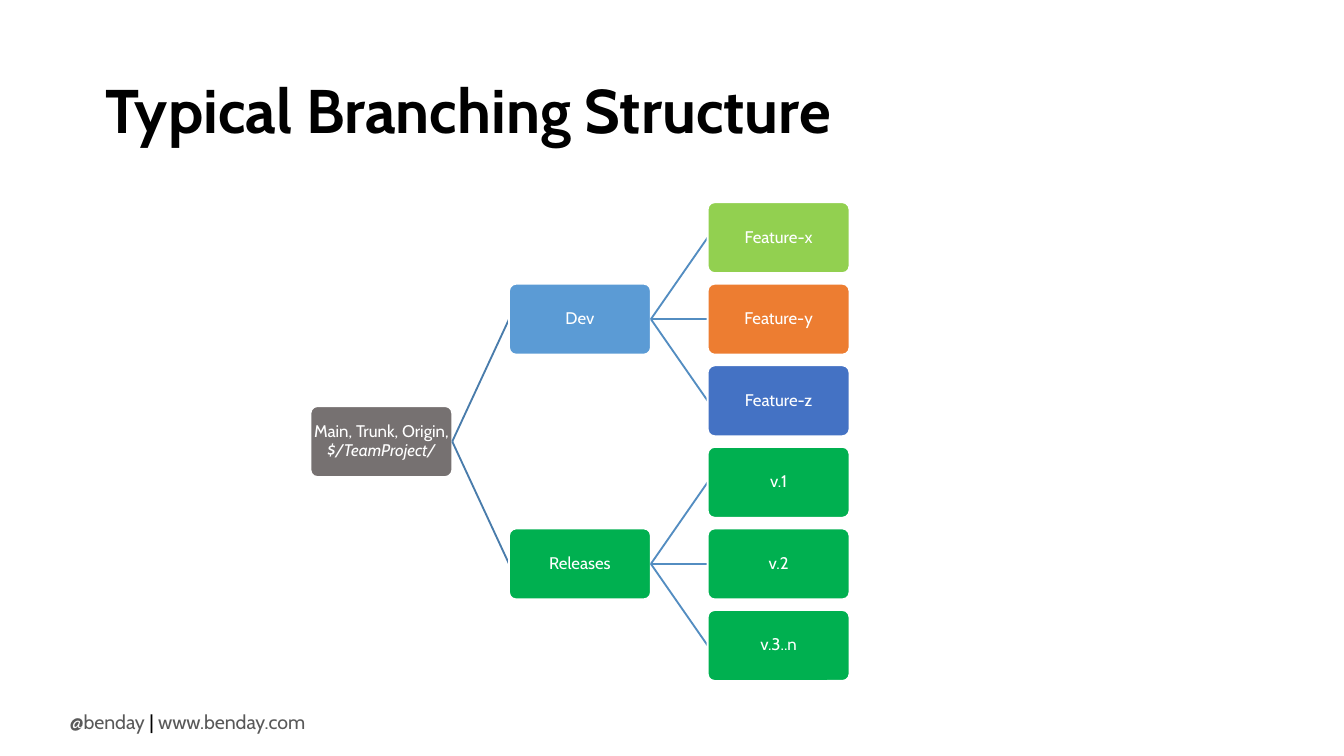
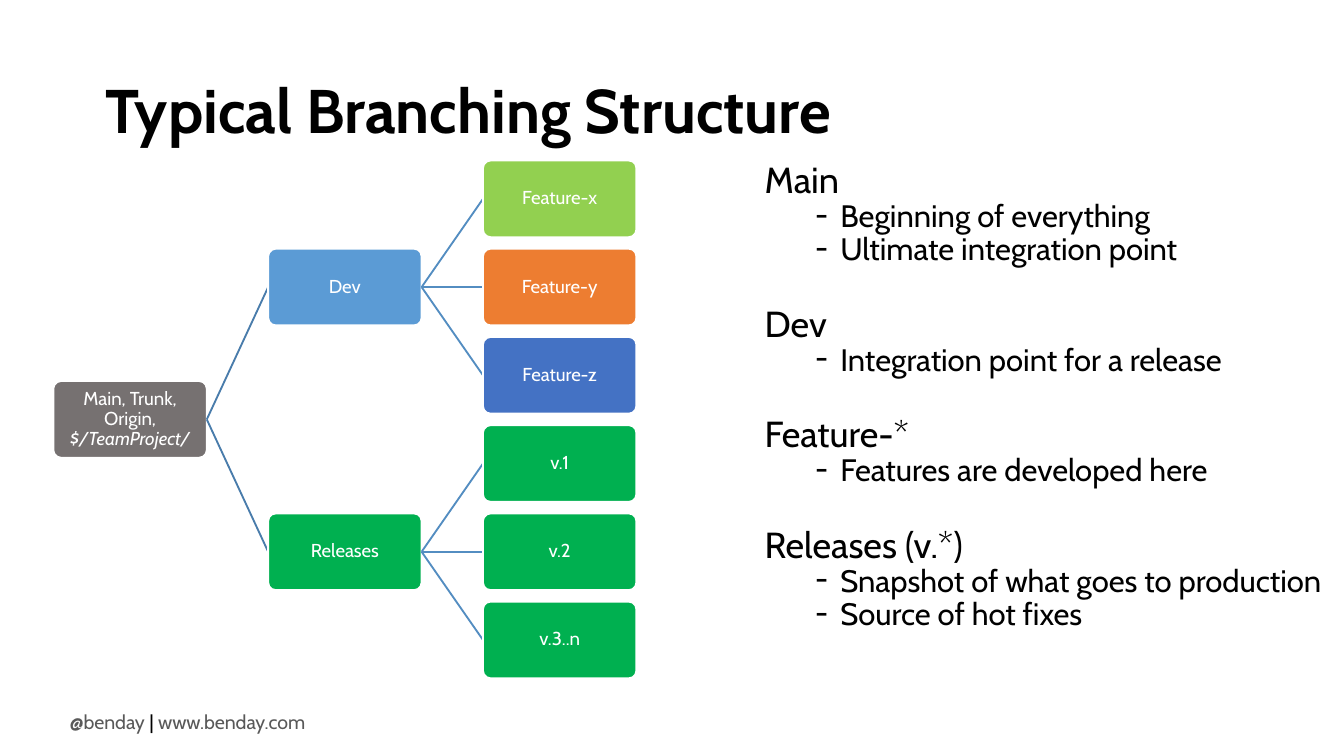
from dataclasses import dataclass

from lxml import etree
from pptx import Presentation
from pptx.dml.color import RGBColor as Rgb
from pptx.enum.shapes import MSO_CONNECTOR as Conn, MSO_SHAPE as Shape
from pptx.enum.text import MSO_ANCHOR as Anchor, MSO_AUTO_SIZE as Fit, PP_ALIGN as Align
from pptx.oxml.ns import qn
from pptx.util import Pt

FONT = "Cabin"
HEX = {
    "black": "000000", "white": "FFFFFF", "foot": "595959",
    "main": "767171", "dev": "5B9BD5", "release": "00B050",
    "lime": "92D050", "orange": "ED7D31", "blue": "4472C4",
}
LINKS = ["497CAB", "538DC1"]  # by depth of the parent box


@dataclass(frozen=True)
class Node:
    text: str
    fill: str
    row: float
    kids: tuple["Node", ...] = ()
    path_line: str = ""


@dataclass(frozen=True)
class Tree:
    """Place and scale of a branch tree; all other sizes follow the box width."""
    left: float
    top: float
    wide: float
    size: float

    @property
    def high(self) -> float:
        return self.wide / 2

    def spot(self, depth: int, row: float) -> tuple[float, float]:
        return self.left + depth * 1.4 * self.wide, self.top + row * 1.15 * self.high


@dataclass(frozen=True)
class Topic:
    head: str
    points: tuple[str, ...]


MAIN = Node("Main, Trunk, Origin,", "main", 2.5, (
    Node("Dev", "dev", 1, (
        Node("Feature-x", "lime", 0),
        Node("Feature-y", "orange", 1),
        Node("Feature-z", "blue", 2))),
    Node("Releases", "release", 4, (
        Node("v.1", "release", 3),
        Node("v.2", "release", 4),
        Node("v.3..n", "release", 5))),
), "$/TeamProject/")

TOPICS = (
    Topic("Main", ("Beginning of everything", "Ultimate integration point")),
    Topic("Dev", ("Integration point for a release",)),
    Topic("Feature-*", ("Features are developed here",)),
    Topic("Releases (v.*)", ("Snapshot of what goes to production", "Source of hot fixes")),
)


def color(name: str) -> Rgb:
    return Rgb.from_string(HEX[name])


def style(para, size: float, tint: str = "black", space: float = 1) -> None:
    para.font.name, para.font.size = FONT, Pt(size)
    para.font.color.rgb = color(tint)
    para.line_spacing = space


def add_box(slide, left: float, top: float, wide: float, high: float):
    frame = slide.shapes.add_textbox(Pt(left), Pt(top), Pt(wide), Pt(high)).text_frame
    frame.word_wrap = True
    return frame


def add_base(deck, title: str):
    """Add a slide with the shared footer and title."""
    slide = deck.slides.add_slide(deck.slide_layouts[6])
    foot = add_box(slide, 30.2, 376.6, 150, 20)
    foot.word_wrap, foot.auto_size = False, Fit.SHAPE_TO_FIT_TEXT
    para = foot.paragraphs[0]
    style(para, 10.5)
    for text, tint in (("@benday", "foot"), (" | ", "black"), ("www.benday.com", "foot")):
        run = para.add_run()
        run.text = text
        run.font.color.rgb = color(tint)
    head = add_box(slide, 49.5, 21.6, 621, 78.3)
    head.vertical_anchor = Anchor.MIDDLE
    para = head.paragraphs[0]
    para.text = title
    style(para, 33, space=0.9)
    para.font.bold = True
    return slide


def add_link(slide, start: tuple[float, float], end: tuple[float, float], tint: str) -> None:
    link = slide.shapes.add_connector(Conn.STRAIGHT, *map(Pt, start + end))
    link.line.color.rgb = Rgb.from_string(tint)
    link.line.width = Pt(1)
    etree.SubElement(link._element.spPr, qn("a:effectLst"))


def add_node(slide, tree: Tree, node: Node, depth: int = 0) -> None:
    """Draw a box, then each child with the link that leads to it."""
    left, top = tree.spot(depth, node.row)
    box = slide.shapes.add_shape(
        Shape.ROUNDED_RECTANGLE, Pt(left), Pt(top), Pt(tree.wide), Pt(tree.high))
    box.adjustments[0] = 0.1
    box.shadow.inherit = False
    box.fill.solid()
    box.fill.fore_color.rgb = color(node.fill)
    box.line.color.rgb = color("white")
    box.line.width = Pt(1)
    frame = box.text_frame
    frame.word_wrap, frame.vertical_anchor = True, Anchor.MIDDLE
    frame.margin_left = frame.margin_right = Pt(0.6)
    frame.margin_top = frame.margin_bottom = Pt(0.6)
    para = frame.paragraphs[0]
    para.alignment = Align.CENTER
    para.add_run().text = node.text
    if node.path_line:
        para.add_line_break()
        run = para.add_run()
        run.text = node.path_line
        run.font.italic = True
    style(para, tree.size, "white", 0.9)
    for kid in node.kids:
        x, y = tree.spot(depth + 1, kid.row)
        mid = tree.high / 2
        add_link(slide, (left + tree.wide, top + mid), (x, y + mid), LINKS[depth])
        add_node(slide, tree, kid, depth + 1)


def add_dash(para) -> None:
    props = para._p.get_or_add_pPr()
    props.set("marL", str(Pt(40.6)))
    props.set("indent", str(Pt(-13.5)))
    etree.SubElement(props, qn("a:buFont"), typeface=FONT)
    etree.SubElement(props, qn("a:buChar"), char="-")


def add_topics(slide, topics: tuple[Topic, ...]) -> None:
    frame = add_box(slide, 402.5, 87.1, 317.5, 297.4)
    for i, topic in enumerate(topics):
        para = frame.add_paragraph() if i else frame.paragraphs[0]
        para.text = topic.head
        style(para, 19.4, space=0.7)
        if i:
            para.space_before = Pt(25.2)
        for point in topic.points:
            para = frame.add_paragraph()
            para.text, para.level = point, 1
            add_dash(para)
            style(para, 16.6, space=0.7)
            para.space_before = Pt(3.8)


def main() -> None:
    deck = Presentation()
    deck.slide_width, deck.slide_height = Pt(720), Pt(405)
    title = "Typical Branching Structure"
    add_node(add_base(deck, title), Tree(166.3, 108.3, 76, 9), MAIN)
    slide = add_base(deck, title)
    add_topics(slide, TOPICS)
    add_node(slide, Tree(28.6, 86, 82.2, 10), MAIN)
    deck.save("out.pptx")


if __name__ == "__main__":
    main()
